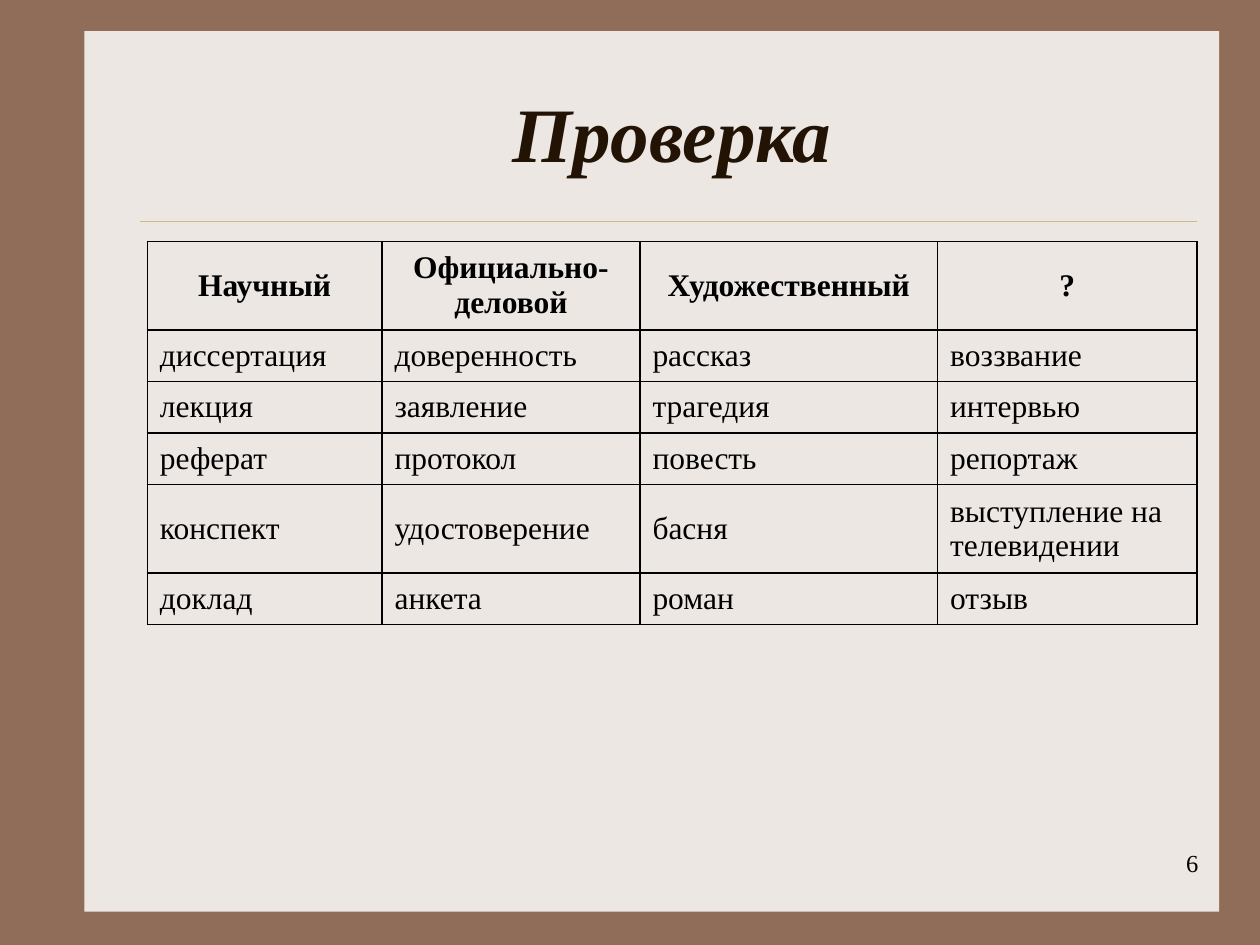
from dataclasses import dataclass

from lxml.etree import SubElement
from pptx import Presentation
from pptx.dml.color import RGBColor
from pptx.enum.shapes import MSO_CONNECTOR, MSO_SHAPE
from pptx.enum.text import MSO_ANCHOR, PP_ALIGN
from pptx.oxml import parse_xml
from pptx.oxml.ns import nsdecls, qn
from pptx.util import Cm, Pt


@dataclass(frozen=True)
class Theme:
    font: str = "Times New Roman"
    frame: str = "906D58"
    panel: str = "EDE7E3"
    rule: str = "CBBD83"
    head: str = "221304"
    ink: str = "000000"
    title: int = 44
    body: int = 18
    page: int = 14


THEME = Theme()
COLS = (4.73, 5.2, 6, 5.23)
ROWS = (1.78, 1.04, 1.04, 1.04, 1.78, 1.04)
STYLES = (
    ("Научный", "Официально-деловой", "Художественный", "?"),
    ("диссертация", "доверенность", "рассказ", "воззвание"),
    ("лекция", "заявление", "трагедия", "интервью"),
    ("реферат", "протокол", "повесть", "репортаж"),
    ("конспект", "удостоверение", "басня", "выступление на телевидении"),
    ("доклад", "анкета", "роман", "отзыв"),
)


def paint(fill, color):
    fill.solid()
    fill.fore_color.rgb = RGBColor.from_string(color)


def write(frame, text, size, color, align, bold=False, italic=False):
    para = frame.paragraphs[0]
    para.alignment = align
    run = para.add_run()
    run.text = text
    font = run.font
    font.name, font.size = THEME.font, Pt(size)
    font.bold, font.italic = bold, italic
    font.color.rgb = RGBColor.from_string(color)


def add_panel(slide, x, y, w, h):
    panel = slide.shapes.add_shape(MSO_SHAPE.RECTANGLE, Cm(x), Cm(y), Cm(w), Cm(h))
    panel.shadow.inherit = False
    paint(panel.fill, THEME.panel)
    panel.line.fill.background()


def add_rule(slide, x, y, w):
    rule = slide.shapes.add_connector(
        MSO_CONNECTOR.STRAIGHT, Cm(x), Cm(y), Cm(x + w), Cm(y))
    rule.line.width = Pt(0.25)
    rule.line.color.rgb = RGBColor.from_string(THEME.rule)
    SubElement(rule.element.spPr, qn("a:effectLst"))


def set_title(slide, text, x, y, w, h):
    """Fill the title placeholder and bring it in front of the panel."""
    title = slide.shapes.title
    title.left, title.top, title.width, title.height = Cm(x), Cm(y), Cm(w), Cm(h)
    title.text_frame.vertical_anchor = MSO_ANCHOR.MIDDLE
    write(title.text_frame, text, THEME.title, THEME.head,
          PP_ALIGN.CENTER, bold=True, italic=True)
    slide.shapes.element.append(title.element)


def add_edges(cell):
    """Draw a thin line on all four sides of a cell."""
    props = cell._tc.get_or_add_tcPr()
    for side in "LRTB":
        props.append(parse_xml(
            f'<a:ln{side} {nsdecls("a")} w="{Pt(1)}"><a:solidFill>'
            f'<a:srgbClr val="{THEME.ink}"/></a:solidFill></a:ln{side}>'))


def add_grid(slide, data, x, y, cols, rows):
    table = slide.shapes.add_table(
        len(rows), len(cols), Cm(x), Cm(y), Cm(sum(cols)), Cm(sum(rows))).table
    table.horz_banding = False
    for col, width in zip(table.columns, cols):
        col.width = Cm(width)
    for i, (row, height, words) in enumerate(zip(table.rows, rows, data)):
        row.height = Cm(height)
        align = PP_ALIGN.LEFT if i else PP_ALIGN.CENTER
        for cell, word in zip(row.cells, words):
            add_edges(cell)
            cell.fill.background()
            cell.vertical_anchor = MSO_ANCHOR.MIDDLE
            write(cell.text_frame, word, THEME.body, THEME.ink, align, bold=i == 0)


def add_page(slide, number, x, y, w, h):
    box = slide.shapes.add_textbox(Cm(x), Cm(y), Cm(w), Cm(h))
    box.text_frame.word_wrap = True
    write(box.text_frame, number, THEME.page, THEME.ink, PP_ALIGN.RIGHT)


def main():
    deck = Presentation()
    deck.slide_width, deck.slide_height = Cm(25.4), Cm(19.05)
    slide = deck.slides.add_slide(deck.slide_layouts[5])
    paint(slide.background.fill, THEME.frame)
    add_panel(slide, 1.7, 0.63, 22.88, 17.75)
    add_rule(slide, 2.82, 4.45, 21.31)
    set_title(slide, "Проверка", 2.97, 1.07, 21.16, 3.18)
    add_grid(slide, STYLES, 2.97, 4.87, COLS, ROWS)
    add_page(slide, "6", 19.13, 16.97, 5.28, 1.27)
    deck.save("out.pptx")


if __name__ == "__main__":
    main()
